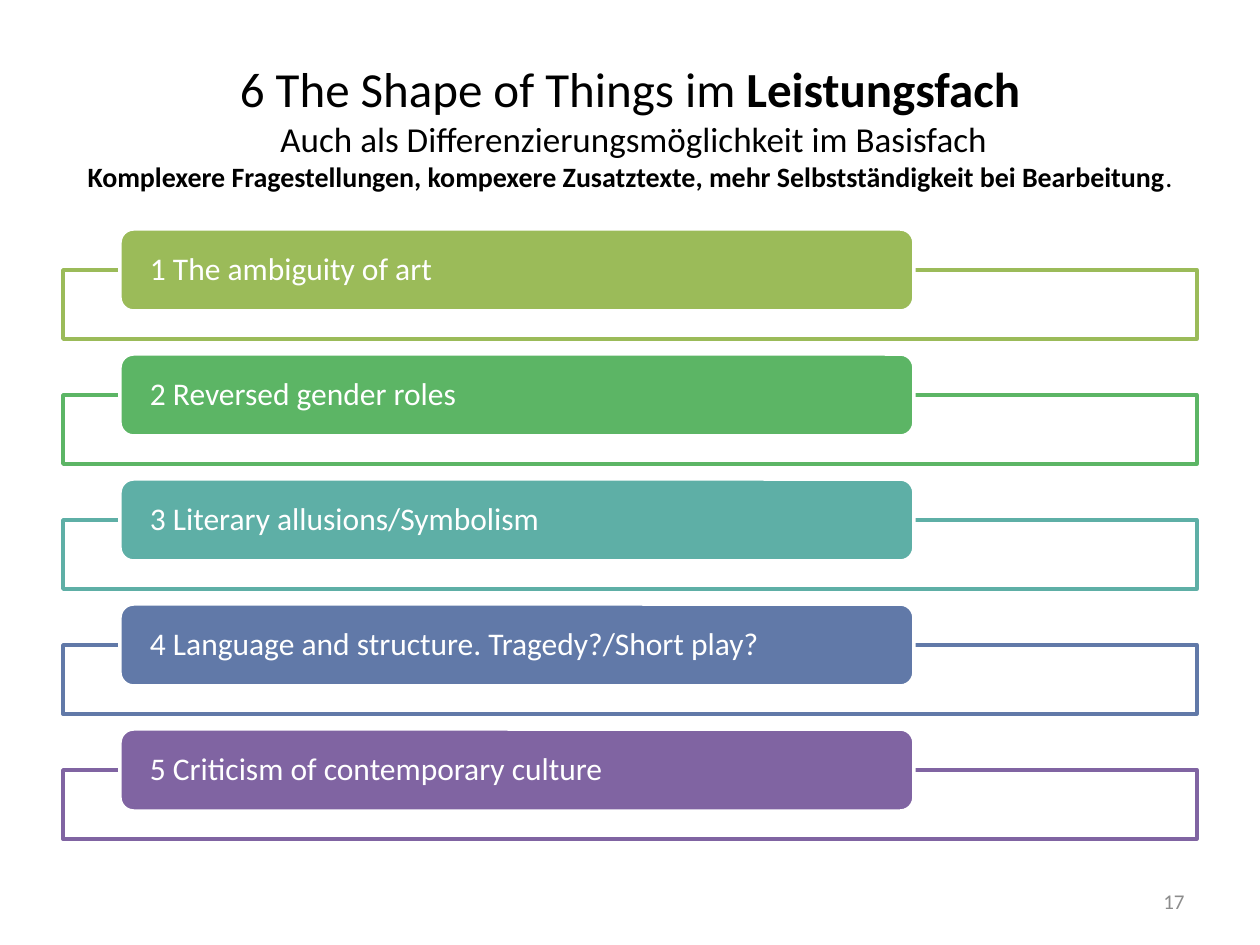
from dataclasses import dataclass

from lxml import etree
from pptx import Presentation
from pptx.dml.color import RGBColor
from pptx.enum.shapes import MSO_SHAPE
from pptx.enum.text import MSO_ANCHOR, PP_ALIGN
from pptx.oxml.ns import qn
from pptx.util import Emu, Pt

RECTANGLE = MSO_SHAPE.RECTANGLE
ROUNDED_RECTANGLE = MSO_SHAPE.ROUNDED_RECTANGLE
MIDDLE = MSO_ANCHOR.MIDDLE
LEFT, CENTER, RIGHT = PP_ALIGN.LEFT, PP_ALIGN.CENTER, PP_ALIGN.RIGHT
EMU_PER_PX = 914400 / 126


@dataclass(frozen=True)
class Theme:
    font: str = "Calibri"
    text: str = "000000"
    white: str = "FFFFFF"
    muted: str = "8C8C8C"
    title_size: int = 28
    subtitle_size: int = 20
    detail_size: int = 16
    topic_size: int = 18
    number_size: int = 12
    line_width: int = 2
    frame_opacity: int = 90


THEME = Theme()

TITLE_LINES = [
    (THEME.title_size, [("6 The Shape of Things im ", False), ("Leistungsfach", True)]),
    (THEME.subtitle_size, [(" Auch als Differenzierungsmöglichkeit im Basisfach", False)]),
    (THEME.detail_size, [
        ("Komplexere Fragestellungen, kompexere Zusatztexte, mehr Selbstständigkeit bei Bearbeitung", True),
        (".", False),
    ]),
]

TOPICS = [
    ("1 The ambiguity of art", "9BBB59"),
    ("2 Reversed gender roles", "5CB565"),
    ("3 Literary allusions/Symbolism", "5EAFA6"),
    ("4 Language and structure. Tragedy?/Short play?", "6179A8"),
    ("5 Criticism of contemporary culture", "8064A2"),
]
FIRST_TOPIC_TOP = 229
TOPIC_PITCH = 125
FRAME_OFFSET = 41
TAB_INSET = 26


def px(length):
    return Emu(round(length * EMU_PER_PX))


def box(left, top, width, height):
    return px(left), px(top), px(width), px(height)


def add_run(paragraph, text, size, color, bold=False):
    run = paragraph.add_run()
    run.text = text
    run.font.name = THEME.font
    run.font.size = Pt(size)
    run.font.bold = bold
    run.font.color.rgb = RGBColor.from_string(color)


def add_text_box(slide, bounds, alignment):
    frame = slide.shapes.add_textbox(*box(*bounds)).text_frame
    frame.word_wrap = True
    frame.vertical_anchor = MIDDLE
    paragraph = frame.paragraphs[0]
    paragraph.alignment = alignment
    return paragraph


def add_panel(slide, kind, bounds, fill, line):
    shape = slide.shapes.add_shape(kind, *box(*bounds))
    shape.shadow.inherit = False
    shape.fill.solid()
    shape.fill.fore_color.rgb = RGBColor.from_string(fill)
    shape.line.color.rgb = RGBColor.from_string(line)
    shape.line.width = Pt(THEME.line_width)
    return shape


def set_fill_opacity(shape, percent):
    color = shape.fill._xPr.find(qn("a:solidFill")).find(qn("a:srgbClr"))
    etree.SubElement(color, qn("a:alpha")).set("val", str(percent * 1000))


def add_title(slide):
    paragraph = add_text_box(slide, (63, 38, 1134, 176), CENTER)
    for index, (size, runs) in enumerate(TITLE_LINES):
        if index:
            paragraph.add_line_break()
        for text, bold in runs:
            add_run(paragraph, text, size, THEME.text, bold)


def add_topic(slide, top, label, color):
    frame = add_panel(slide, RECTANGLE, (63, top + FRAME_OFFSET, 1134, 69), THEME.white, color)
    set_fill_opacity(frame, THEME.frame_opacity)
    tab = add_panel(slide, ROUNDED_RECTANGLE, (120, top, 794, 82), color, THEME.white)
    text_frame = tab.text_frame
    text_frame.word_wrap = True
    text_frame.vertical_anchor = MIDDLE
    text_frame.margin_left = text_frame.margin_right = px(TAB_INSET)
    text_frame.margin_top = text_frame.margin_bottom = 0
    paragraph = text_frame.paragraphs[0]
    paragraph.alignment = LEFT
    paragraph.line_spacing = 0.9
    add_run(paragraph, label, THEME.topic_size, THEME.white)


def add_slide_number(slide):
    paragraph = add_text_box(slide, (903, 876, 294, 50), RIGHT)
    add_run(paragraph, "17", THEME.number_size, THEME.muted)


def main():
    presentation = Presentation()
    presentation.slide_width = px(1260)
    presentation.slide_height = px(945)
    slide = presentation.slides.add_slide(presentation.slide_layouts[6])
    add_title(slide)
    for index, (label, color) in enumerate(TOPICS):
        add_topic(slide, FIRST_TOPIC_TOP + index * TOPIC_PITCH, label, color)
    add_slide_number(slide)
    presentation.save("out.pptx")


if __name__ == "__main__":
    main()
